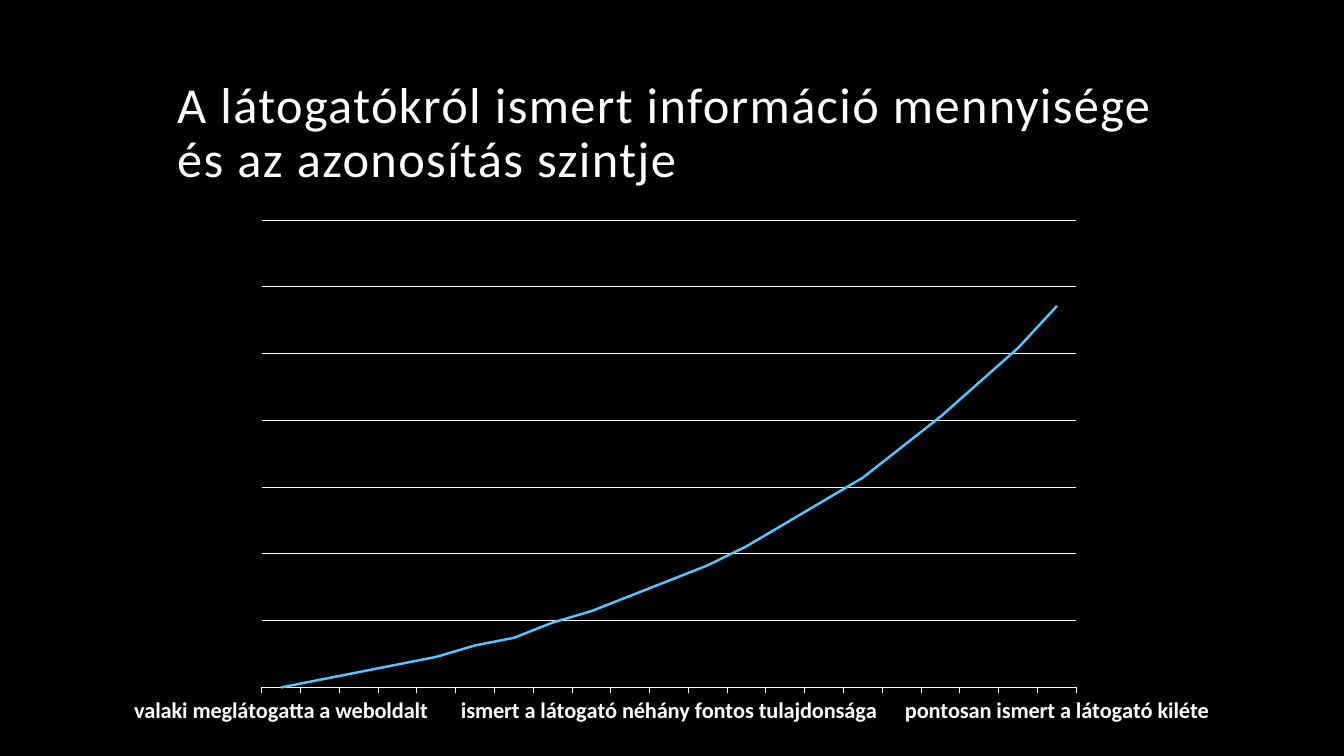
from lxml import etree
from pptx import Presentation
from pptx.chart.data import CategoryChartData
from pptx.dml.color import RGBColor
from pptx.enum import chart as ch, text
from pptx.oxml import parse_xml
from pptx.oxml.ns import nsdecls, qn
from pptx.util import Inches, Pt

WHITE, BLACK, BLUE = "FFFFFF", "000000", "56C5FF"


def paint(fmt, color):
    """Give a fill, or the fill of a line, one solid colour."""
    fmt.solid()
    fmt.fore_color.rgb = RGBColor.from_string(color)


def add_text(slide, content, left, top, width, height, size, color, spacing, line_spacing):
    tf = slide.shapes.add_textbox(Inches(left), Inches(top), Inches(width), Inches(height)).text_frame
    tf.word_wrap = True
    tf.vertical_anchor = text.MSO_ANCHOR.BOTTOM
    p = tf.paragraphs[0]
    p.line_spacing = line_spacing
    r = p.add_run()
    r.text = content
    r.font.name = "Calibri"
    r.font.size = Pt(size)
    paint(r.font.fill, color)
    r.font._element.set("spc", str(spacing * 100))


prs = Presentation()
prs.slide_width, prs.slide_height = Inches(13.33), Inches(7.5)
s = prs.slides.add_slide(prs.slide_layouts[6])
paint(s.background.fill, BLACK)

add_text(s, "A látogatókról ismert információ mennyisége és az azonosítás szintje",
         1.66, 0.42, 10, 1.5, size=36, color=WHITE, spacing=1, line_spacing=0.9)

levels = [0, 2, 4, 6, 8, 11, 13, 17, 20, 24, 28, 32, 37, 43, 49, 55, 63, 71, 80, 89, 100]
stages = {
    0: "valaki meglátogatta a weboldalt",
    10: "ismert a látogató néhány fontos tulajdonsága",
    20: "pontosan ismert a látogató kiléte",
}
data = CategoryChartData()
data.categories = [stages.get(i, "") for i in range(len(levels))]
data.add_series("Series 1", levels)
chart = s.shapes.add_chart(ch.XL_CHART_TYPE.LINE, Inches(1.23), Inches(2.08),
                           Inches(11.1), Inches(5.21), data).chart
chart.has_legend = False
chart.has_title = False
chart.font.name = "Calibri"
chart.font.size = Pt(10)
paint(chart.font.fill, WHITE)

plot = chart.plots[0]
plot.vary_by_categories = False
curve = plot.series[0]
curve.smooth = False
curve.marker.style = ch.XL_MARKER_STYLE.NONE
curve.format.line.width = Pt(1.75)
paint(curve.format.line.fill, BLUE)

levels_axis = chart.value_axis
levels_axis.visible = False
levels_axis.minimum_scale, levels_axis.maximum_scale = 0, 122.5
levels_axis.major_unit = 17.5
levels_axis.has_major_gridlines = True

stage_axis = chart.category_axis
stage_axis.major_tick_mark = ch.XL_TICK_MARK.OUTSIDE
stage_axis.tick_labels.font.size = Pt(16)
stage_axis.tick_labels.font.bold = True
stage_axis.tick_labels.font.name = "Calibri"
paint(stage_axis.tick_labels.font.fill, WHITE)
for line in (levels_axis.major_gridlines.format.line, stage_axis.format.line):
    line.width = Pt(0.75)
    paint(line.fill, WHITE)

# Label every tenth category, keep a tick at each one
no_multi = stage_axis._element.find(qn("c:noMultiLvlLbl"))
for tag, step in (("tickLblSkip", 10), ("tickMarkSkip", 1)):
    no_multi.addprevious(parse_xml(f'<c:{tag} {nsdecls("c")} val="{step}"/>'))

# Fix the inner plot area, as fractions of the chart
plot_area = chart._chartSpace.chart.plotArea
for old in plot_area.findall(qn("c:layout")):
    plot_area.remove(old)
layout = parse_xml(f'<c:layout {nsdecls("c")}><c:manualLayout/></c:layout>')
for tag, val in (("layoutTarget", "inner"), ("xMode", "edge"), ("yMode", "edge"),
                 ("x", 0.123), ("y", 0.02), ("w", 0.728), ("h", 0.89)):
    etree.SubElement(layout[0], qn(f"c:{tag}")).set("val", str(val))
plot_area.insert(0, layout)

prs.save("out.pptx")
